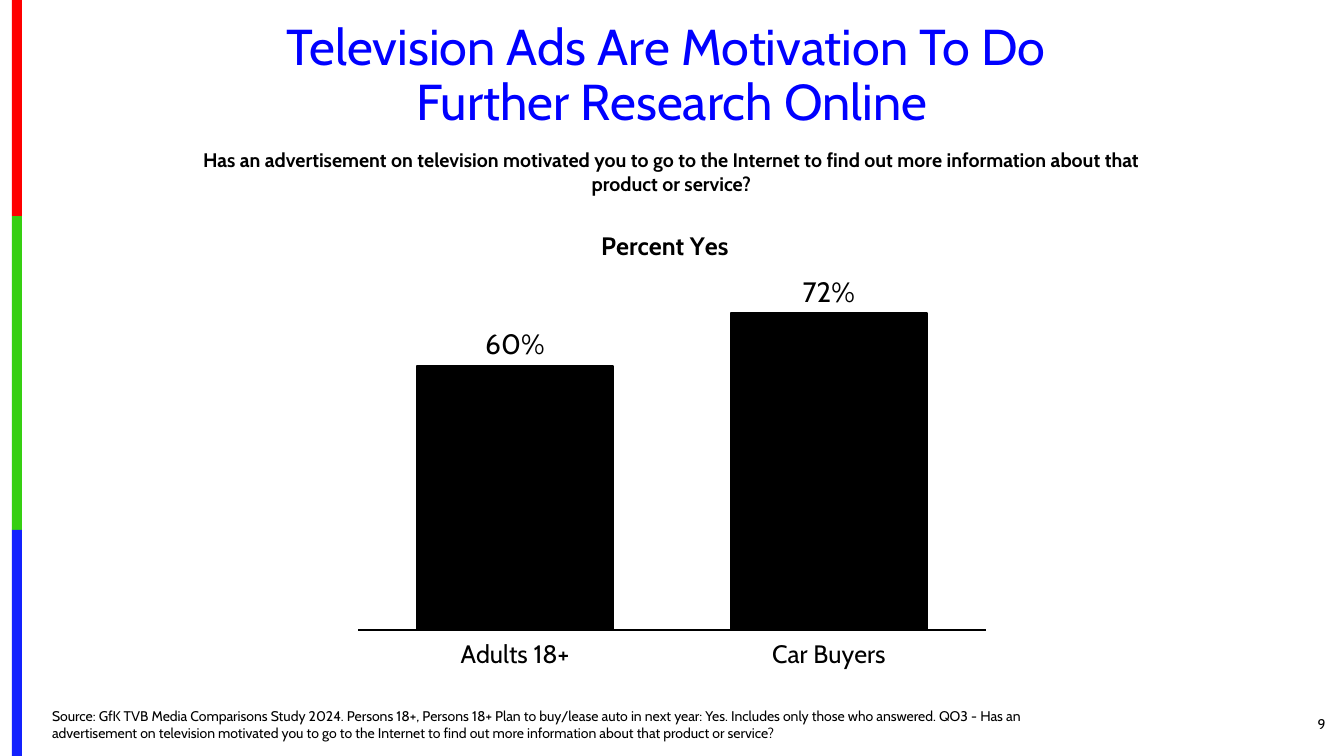
from lxml.etree import SubElement
from pptx import Presentation
from pptx.chart.data import CategoryChartData
from pptx.dml.color import RGBColor
from pptx.enum.chart import XL_CHART_TYPE, XL_LABEL_POSITION, XL_TICK_LABEL_POSITION, XL_TICK_MARK
from pptx.enum.shapes import MSO_SHAPE
from pptx.enum.text import MSO_ANCHOR, PP_ALIGN
from pptx.oxml import parse_xml
from pptx.oxml.ns import nsdecls, qn
from pptx.util import Pt

FONT = "Cabin"
BLACK = RGBColor(0x00, 0x00, 0x00)
TITLE_BLUE = RGBColor(0x00, 0x00, 0xFF)
STRIPE_RED = RGBColor(0xFE, 0x00, 0x00)
STRIPE_GREEN = RGBColor(0x36, 0xCF, 0x12)
STRIPE_BLUE = RGBColor(0x13, 0x22, 0xFE)


def style_font(font, size, color=BLACK, bold=False):
    font.name = FONT
    font.size = Pt(size)
    font.bold = bold
    font.color.rgb = color


def place(shape, box):
    shape.left, shape.top, shape.width, shape.height = (Pt(value) for value in box)


def write_lines(shape, lines, size, color=BLACK, bold=False,
                align=PP_ALIGN.LEFT, anchor=MSO_ANCHOR.TOP):
    frame = shape.text_frame
    frame.word_wrap = True
    frame.vertical_anchor = anchor
    paragraph = frame.paragraphs[0]
    paragraph.alignment = align
    paragraph.space_before = Pt(0)
    for index, line in enumerate(lines):
        if index:
            paragraph.add_line_break()
        run = paragraph.add_run()
        run.text = line
        style_font(run.font, size, color, bold)
    return paragraph


def add_sidebar(slide, box):
    left, top, width, height = box
    for color, share in ((STRIPE_RED, 0.286), (STRIPE_GREEN, 0.415), (STRIPE_BLUE, 0.299)):
        stripe = slide.shapes.add_shape(MSO_SHAPE.RECTANGLE, 0, 0, 0, 0)
        place(stripe, (left, top, width, height * share))
        stripe.shadow.inherit = False
        stripe.fill.solid()
        stripe.fill.fore_color.rgb = color
        stripe.line.fill.background()
        top += height * share


def add_title(slide, box):
    title = slide.shapes.title
    place(title, box)
    paragraph = write_lines(
        title, ["Television Ads Are Motivation To Do ", "Further Research Online"],
        36, TITLE_BLUE, align=PP_ALIGN.CENTER)
    paragraph.line_spacing = 0.9


def add_question(slide, box):
    question = slide.shapes.add_textbox(0, 0, 0, 0)
    place(question, box)
    write_lines(
        question,
        ["Has an advertisement on television motivated you to go to the Internet "
         "to find out more information about that product or service?"],
        14, bold=True, align=PP_ALIGN.CENTER)


def add_source(slide, box):
    source = slide.placeholders[1]
    place(source, box)
    properties = source.text_frame.paragraphs[0]._p.get_or_add_pPr()
    properties.set("marL", "0")
    properties.set("indent", "0")
    SubElement(properties, qn("a:buNone"))
    write_lines(
        source,
        ["Source: GfK TVB Media Comparisons Study 2024. Persons 18+, Persons 18+ Plan to "
         "buy/lease auto in next year: Yes. Includes only those who answered. QO3 - Has an "
         "advertisement on television motivated you to go to the Internet to find out more "
         "information about that product or service?"],
        10, anchor=MSO_ANCHOR.BOTTOM)


def add_page_number(slide, box):
    number = slide.shapes.add_textbox(0, 0, 0, 0)
    place(number, box)
    write_lines(number, ["9"], 10, align=PP_ALIGN.RIGHT, anchor=MSO_ANCHOR.MIDDLE)


def set_layout(element, position, inner=False):
    for old in element.findall(qn("c:layout")):
        element.remove(old)
    target = '<c:layoutTarget val="inner"/>' if inner else ""
    modes = "".join(f'<c:{key}Mode val="edge"/>' for key in "xy")
    values = "".join(f'<c:{key} val="{value}"/>' for key, value in zip("xywh", position))
    layout = parse_xml(
        f'<c:layout {nsdecls("c")}><c:manualLayout>{target}{modes}{values}'
        '</c:manualLayout></c:layout>')
    if inner:
        element.insert(0, layout)
    else:
        element.find(qn("c:tx")).addnext(layout)


def add_percent_chart(slide, box):
    data = CategoryChartData(number_format="0%")
    data.categories = ["Adults 18+", "Car Buyers"]
    data.add_series("Series 1", [0.6, 0.72])
    left, top, width, height = (Pt(value) for value in box)
    chart = slide.shapes.add_chart(
        XL_CHART_TYPE.COLUMN_CLUSTERED, left, top, width, height, data).chart
    style_font(chart.font, 10)
    chart.has_legend = False

    run = chart.chart_title.text_frame.paragraphs[0].add_run()
    run.text = "Percent Yes"
    style_font(run.font, 18, bold=True)
    chart.chart_title.include_in_layout = False
    set_layout(chart.chart_title._element, (0.38, 0.04))
    set_layout(chart._chartSpace.chart.plotArea, (0, 0.147, 1, 0.692), inner=True)

    value_axis = chart.value_axis
    value_axis.visible = False
    value_axis.has_major_gridlines = False
    value_axis.minimum_scale = 0
    value_axis.maximum_scale = 0.8

    category_axis = chart.category_axis
    category_axis.major_tick_mark = XL_TICK_MARK.NONE
    category_axis.tick_label_position = XL_TICK_LABEL_POSITION.LOW
    category_axis.format.line.color.rgb = BLACK
    category_axis.format.line.width = Pt(1.5)
    style_font(category_axis.tick_labels.font, 18)

    plot = chart.plots[0]
    plot.gap_width = 60
    plot.vary_by_categories = False
    series = plot.series[0]
    series.format.fill.solid()
    series.format.fill.fore_color.rgb = BLACK
    series.format.line.color.rgb = BLACK
    series.format.line.width = Pt(1.5)
    labels = series.data_labels
    labels.show_value = True
    labels.number_format = "0%"
    labels.number_format_is_linked = False
    labels.position = XL_LABEL_POSITION.OUTSIDE_END
    style_font(labels.font, 20)


def main():
    presentation = Presentation()
    presentation.slide_width = Pt(960)
    presentation.slide_height = Pt(540)
    slide = presentation.slides.add_slide(presentation.slide_layouts[1])
    add_sidebar(slide, (8.5, 0, 7.2, 540))
    add_title(slide, (33, 12.2, 894, 85.7))
    add_page_number(slide, (876, 502.5, 78, 29))
    add_source(slide, (30, 501, 714, 32))
    add_question(slide, (134.6, 102.2, 690, 41))
    add_percent_chart(slide, (255, 145.4, 450, 363))
    presentation.save("out.pptx")


if __name__ == "__main__":
    main()
